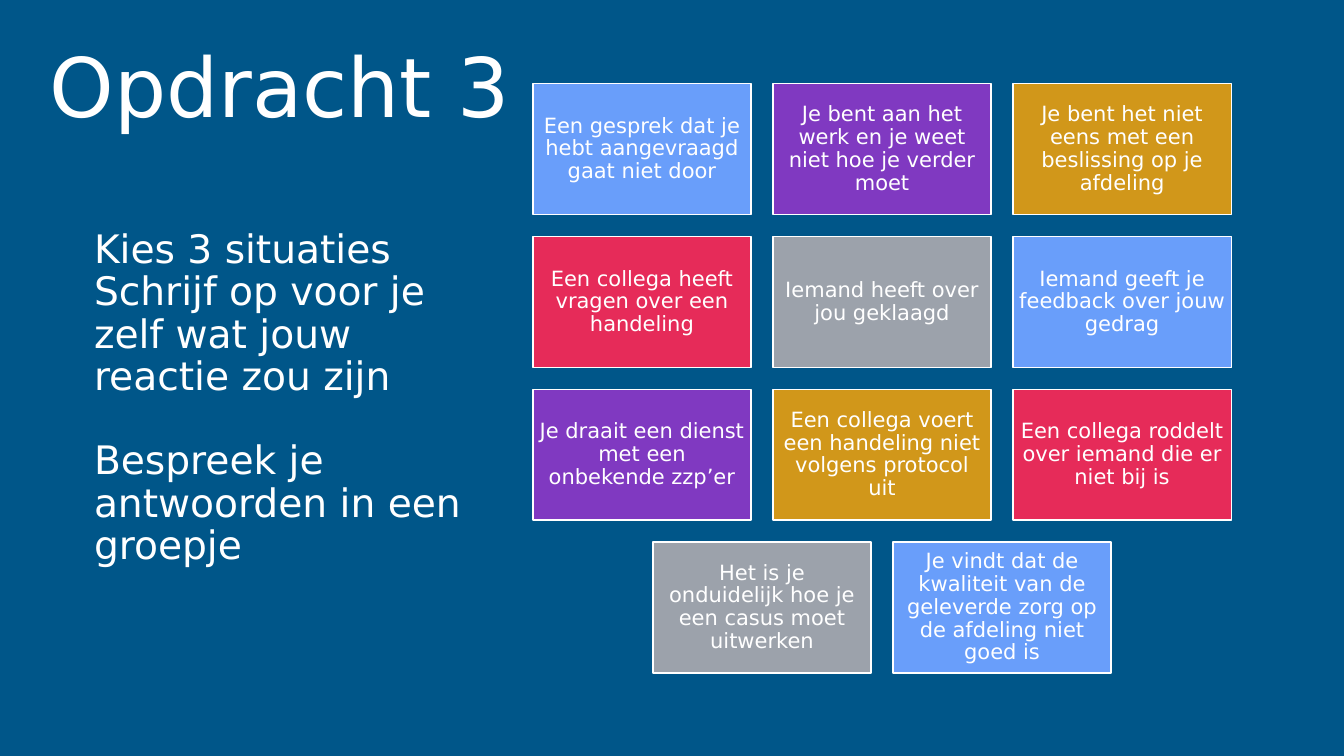
import pptx
import pptx.util
import pptx.dml.color
import pptx.enum.shapes
import pptx.enum.text
from pptx.util import Cm, Pt

TITLE = "Opdracht 3"
INSTRUCTIONS = [
    "Kies 3 situaties",
    "Schrijf op voor je zelf wat jouw reactie zou zijn",
    "Bespreek je antwoorden in een groepje",
]
SITUATIONS = [
    "Een gesprek dat je hebt aangevraagd gaat niet door",
    "Je bent aan het werk en je weet niet hoe je verder moet",
    "Je bent het niet eens met een beslissing op je afdeling",
    "Een collega heeft vragen over een handeling",
    "Iemand heeft over jou geklaagd",
    "Iemand geeft je feedback over jouw gedrag",
    "Je draait een dienst met een onbekende zzp’er",
    "Een collega voert een handeling niet volgens protocol uit",
    "Een collega roddelt over iemand die er niet bij is",
    "Het is je onduidelijk hoe je een casus moet uitwerken",
    "Je vindt dat de kwaliteit van de geleverde zorg op de afdeling niet goed is",
]
COLORS = {
    "background": "005689",
    "white": "FFFFFF",
    "blue": "699EFA",
    "purple": "8039C1",
    "gold": "D1971A",
    "red": "E62B59",
    "grey": "9CA2AB",
}
CARD_CYCLE = ["blue", "purple", "gold", "red", "grey"]
FONT = "DejaVu Sans"

COLUMNS = 3
CARD_WIDTH, CARD_HEIGHT = 5.5, 3.3
COLUMN_STEP, ROW_STEP = 6.05, 3.85
GRID_CENTER, GRID_TOP = 22.23, 2.11

ALIGN = pptx.enum.text.PP_ALIGN
ANCHOR = pptx.enum.text.MSO_ANCHOR


def color(name):
    return pptx.dml.color.RGBColor.from_string(COLORS[name])


def write(shape, lines, size, align=ALIGN.LEFT, anchor=ANCHOR.MIDDLE, inset=None):
    """Fill a shape with one paragraph per line; inset in cm sets all margins."""
    frame = shape.text_frame
    frame.word_wrap = True
    frame.vertical_anchor = anchor
    if inset is not None:
        frame.margin_left = frame.margin_right = Cm(inset)
        frame.margin_top = frame.margin_bottom = Cm(inset)
    frame.text = "\n".join(lines)
    for paragraph in frame.paragraphs:
        paragraph.alignment = align
        paragraph.line_spacing = 0.9
        paragraph.font.size = Pt(size)
        paragraph.font.name = FONT
        paragraph.font.color.rgb = color("white")
    return frame


def add_card(slide, index, situation):
    row, column = divmod(index, COLUMNS)
    cards_in_row = min(COLUMNS, len(SITUATIONS) - row * COLUMNS)
    center = GRID_CENTER + (column - (cards_in_row - 1) / 2) * COLUMN_STEP
    card = slide.shapes.add_shape(
        pptx.enum.shapes.MSO_SHAPE.RECTANGLE,
        Cm(center - CARD_WIDTH / 2), Cm(GRID_TOP + row * ROW_STEP),
        Cm(CARD_WIDTH), Cm(CARD_HEIGHT))
    card.shadow.inherit = False
    card.fill.solid()
    card.fill.fore_color.rgb = color(CARD_CYCLE[index % len(CARD_CYCLE)])
    card.line.color.rgb = color("white")
    card.line.width = Pt(1)
    write(card, [situation], 15, align=ALIGN.CENTER, inset=0.15)


def main():
    deck = pptx.Presentation()
    deck.slide_width, deck.slide_height = Cm(33.87), Cm(19.05)
    slide = deck.slides.add_slide(deck.slide_layouts[6])
    slide.background.fill.solid()
    slide.background.fill.fore_color.rgb = color("background")

    title = slide.shapes.add_textbox(Cm(1), Cm(1.05), Cm(22.15), Cm(2.1))
    write(title, [TITLE], 58.7, anchor=ANCHOR.TOP)

    instructions = slide.shapes.add_textbox(Cm(2.12), Cm(3.7), Cm(10.6), Cm(12.7))
    frame = write(instructions, INSTRUCTIONS, 28)
    frame.paragraphs[-1].space_before = Pt(30)

    for index, situation in enumerate(SITUATIONS):
        add_card(slide, index, situation)

    deck.save("out.pptx")


if __name__ == "__main__":
    main()
